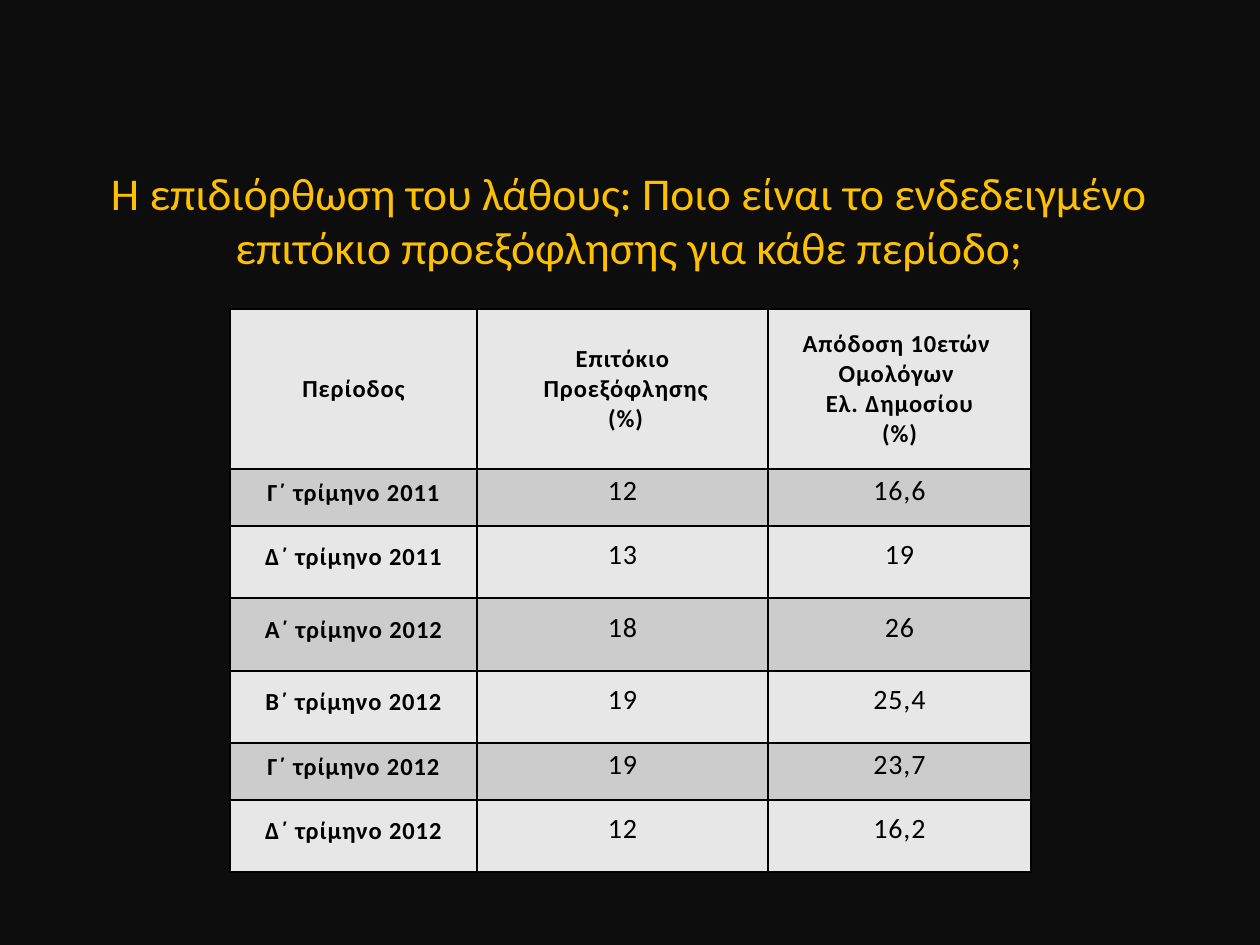
"""Build a slide with a title and a table of discount rates and bond yields by quarter."""
from pptx import Presentation
from pptx import util as u
from pptx.dml.color import RGBColor
from pptx.enum import text
from pptx.oxml import parse_xml
from pptx.oxml.ns import nsdecls

TITLE = "Η επιδιόρθωση του λάθους: Ποιο είναι το ενδεδειγμένο επιτόκιο προεξόφλησης για κάθε περίοδο;"
ROWS = [
    ("Περίοδος", "Επιτόκιο\n Προεξόφλησης\n (%)", "Απόδοση 10ετών \nΟμολόγων \nΕλ. Δημοσίου\n(%)"),
    ("Γ΄ τρίμηνο 2011", "12", "16,6"),
    ("Δ΄ τρίμηνο 2011", "13", "19"),
    ("Α΄ τρίμηνο 2012", "18", "26"),
    ("Β΄ τρίμηνο 2012", "19", "25,4"),
    ("Γ΄ τρίμηνο 2012", "19", "23,7"),
    ("Δ΄ τρίμηνο 2012", "12", "16,2"),
]
COLUMN_WIDTHS = (247, 291, 263)
ROW_HEIGHTS = (160, 57, 72, 73, 72, 57, 72)
TITLE_BOX = (78, 158, 1103, 123)
TABLE_CORNER = (230, 309)
BACKGROUND, GOLD, BLACK = "0D0D0D", "FFC000", "000000"
BANDS = ("E7E7E7", "CCCCCC")
LABEL = {"size": u.Pt(14), "bold": True, "name": "Calibri"}
VALUE = {"size": u.Pt(16), "bold": False, "name": "Calibri"}
HEADING = {"size": u.Pt(26), "bold": False, "name": "Calibri"}
CELL = {"margin_left": u.Inches(0.06), "margin_right": u.Inches(0.06), "margin_top": 0,
        "margin_bottom": 0, "vertical_anchor": text.MSO_ANCHOR.MIDDLE}
FRAME = {"word_wrap": True, "auto_size": text.MSO_AUTO_SIZE.NONE,
         "vertical_anchor": text.MSO_ANCHOR.MIDDLE}


def px(length):
    return u.Emu(round(length * 914400 / 126))


def color(value):
    return RGBColor.from_string(value)


def apply(target, values):
    for name, value in values.items():
        setattr(target, name, value)


def paint(fill, value):
    fill.solid()
    fill.fore_color.rgb = color(value)


def write(frame, content, font, ink, spacing=0, leading=None):
    frame.text = content
    for paragraph in frame.paragraphs:
        paragraph.alignment = text.PP_ALIGN.CENTER
        paragraph.line_spacing = leading
        for run in paragraph.runs:
            apply(run.font, font)
            run.font.color.rgb = color(ink)
            run._r.get_or_add_rPr().set("spc", str(spacing))


def add_borders(cell):
    properties = cell._tc.get_or_add_tcPr()
    for side in "LRTB":
        properties.append(parse_xml(
            f'<a:ln{side} {nsdecls("a")} w="12700"><a:solidFill>'
            f'<a:srgbClr val="{BLACK}"/></a:solidFill></a:ln{side}>'))


def add_title(slide):
    title = slide.shapes.title
    apply(title, dict(zip(("left", "top", "width", "height"), map(px, TITLE_BOX))))
    apply(title.text_frame, FRAME)
    write(title.text_frame, TITLE, HEADING, GOLD)


def add_rates(slide):
    size = sum(COLUMN_WIDTHS), sum(ROW_HEIGHTS)
    table = slide.shapes.add_table(len(ROWS), len(COLUMN_WIDTHS),
                                   *map(px, TABLE_CORNER + size)).table
    for column, width in zip(table.columns, COLUMN_WIDTHS):
        column.width = px(width)
    for i, (row, height, contents) in enumerate(zip(table.rows, ROW_HEIGHTS, ROWS)):
        row.height = px(height)
        for j, (cell, content) in enumerate(zip(row.cells, contents)):
            apply(cell, CELL)
            add_borders(cell)
            paint(cell.fill, BANDS[i % 2])
            write(cell.text_frame, content, VALUE if i and j else LABEL, BLACK,
                  spacing=50, leading=u.Pt(12) if i else None)


def main():
    presentation = Presentation()
    apply(presentation, {"slide_width": px(1260), "slide_height": px(945)})
    slide = presentation.slides.add_slide(presentation.slide_layouts[5])
    paint(slide.background.fill, BACKGROUND)
    add_title(slide)
    add_rates(slide)
    presentation.save("out.pptx")


if __name__ == "__main__":
    main()
